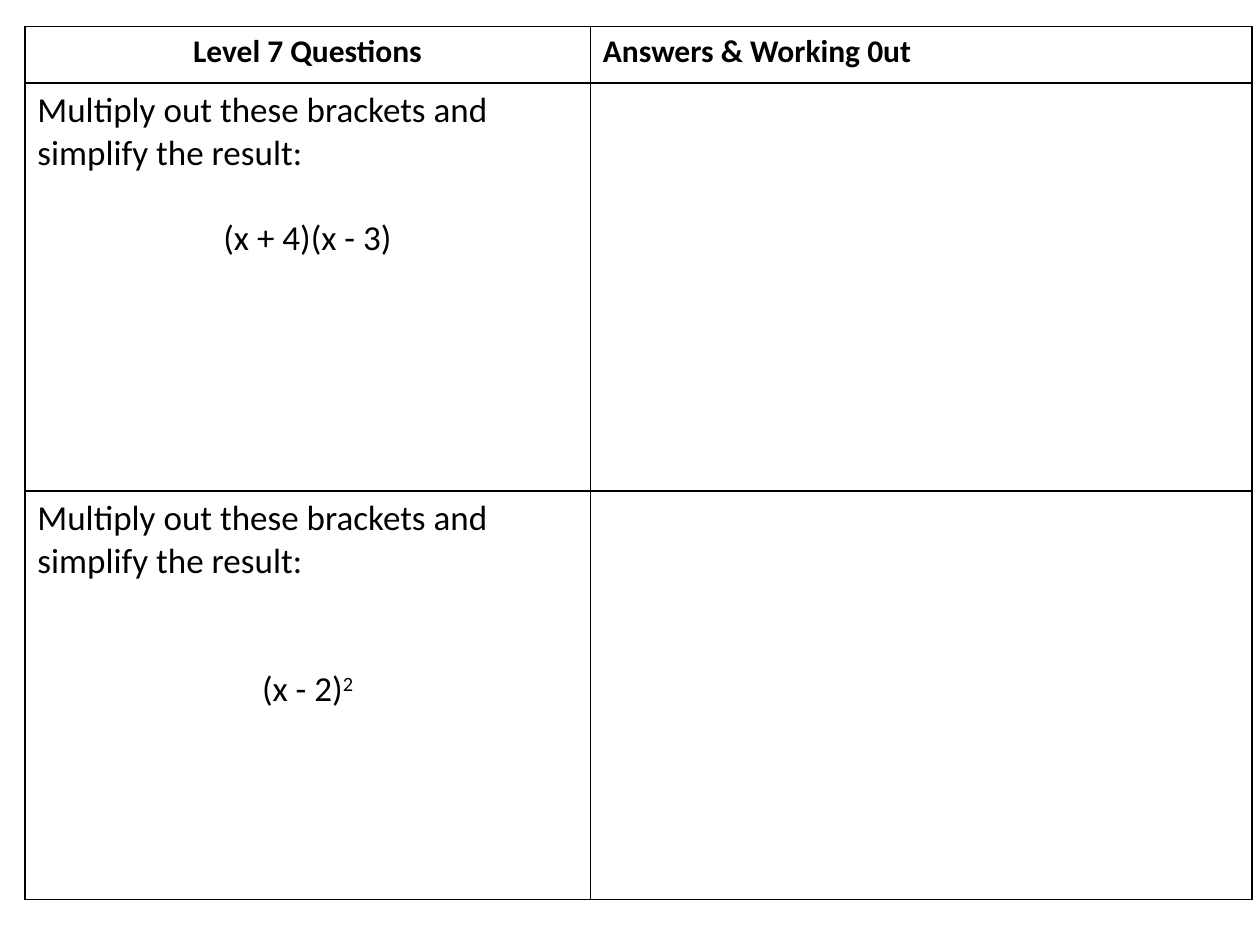
from lxml.etree import SubElement
from pptx import Presentation
from pptx.dml.color import RGBColor
from pptx.enum.text import PP_ALIGN as Align
from pptx.oxml.ns import qn
from pptx.util import Cm, Pt

BLACK = RGBColor(0x00, 0x00, 0x00)
PROMPT = "Multiply out these brackets and simplify the result:"
LINE_HEIGHT = 24.4


def add_text(para, text, size=20, bold=False, align=Align.LEFT, gap=0, raised=False):
    para.alignment = align
    para.space_before = Pt(gap)
    span = para.add_run()
    span.text = text
    span.font.name = "Calibri"
    span.font.size = Pt(size)
    span.font.bold = bold
    span.font.color.rgb = BLACK
    if raised:
        span.font._element.set("baseline", "30000")


def add_borders(cell):
    properties = cell._tc.get_or_add_tcPr()
    for side in ("a:lnL", "a:lnR", "a:lnT", "a:lnB"):
        line = SubElement(properties, qn(side), w=str(Pt(1)))
        fill = SubElement(line, qn("a:solidFill"))
        SubElement(fill, qn("a:srgbClr"), val=str(BLACK))


deck = Presentation()
deck.slide_width = Cm(25.4)
deck.slide_height = Cm(19.05)
page = deck.slides.add_slide(deck.slide_layouts[6])

widths = [11.4, 13.34]
heights = [1.14, 8.23, 8.23]
frame = page.shapes.add_table(
    len(heights), len(widths), Cm(0.5), Cm(0.53), Cm(sum(widths)), Cm(sum(heights))
)
table = frame.table
table.first_row = False
table.horz_banding = False
for column, width in zip(table.columns, widths):
    column.width = Cm(width)
for row, height in zip(table.rows, heights):
    row.height = Cm(height)
for cell in table.iter_cells():
    add_borders(cell)
    cell.fill.background()

headings = [("Level 7 Questions", Align.CENTER), ("Answers & Working 0ut", Align.LEFT)]
for column, (heading, align) in enumerate(headings):
    para = table.cell(0, column).text_frame.paragraphs[0]
    add_text(para, heading, size=18, bold=True, align=align)

questions = [("(x + 4)(x - 3)", "", 1), ("(x - 2)", "2", 2)]
for row, (expression, power, gap_lines) in enumerate(questions, start=1):
    box = table.cell(row, 0).text_frame
    add_text(box.paragraphs[0], PROMPT)
    para = box.add_paragraph()
    gap = gap_lines * LINE_HEIGHT
    add_text(para, expression, align=Align.CENTER, gap=gap)
    if power:
        add_text(para, power, align=Align.CENTER, gap=gap, raised=True)

deck.save("out.pptx")
